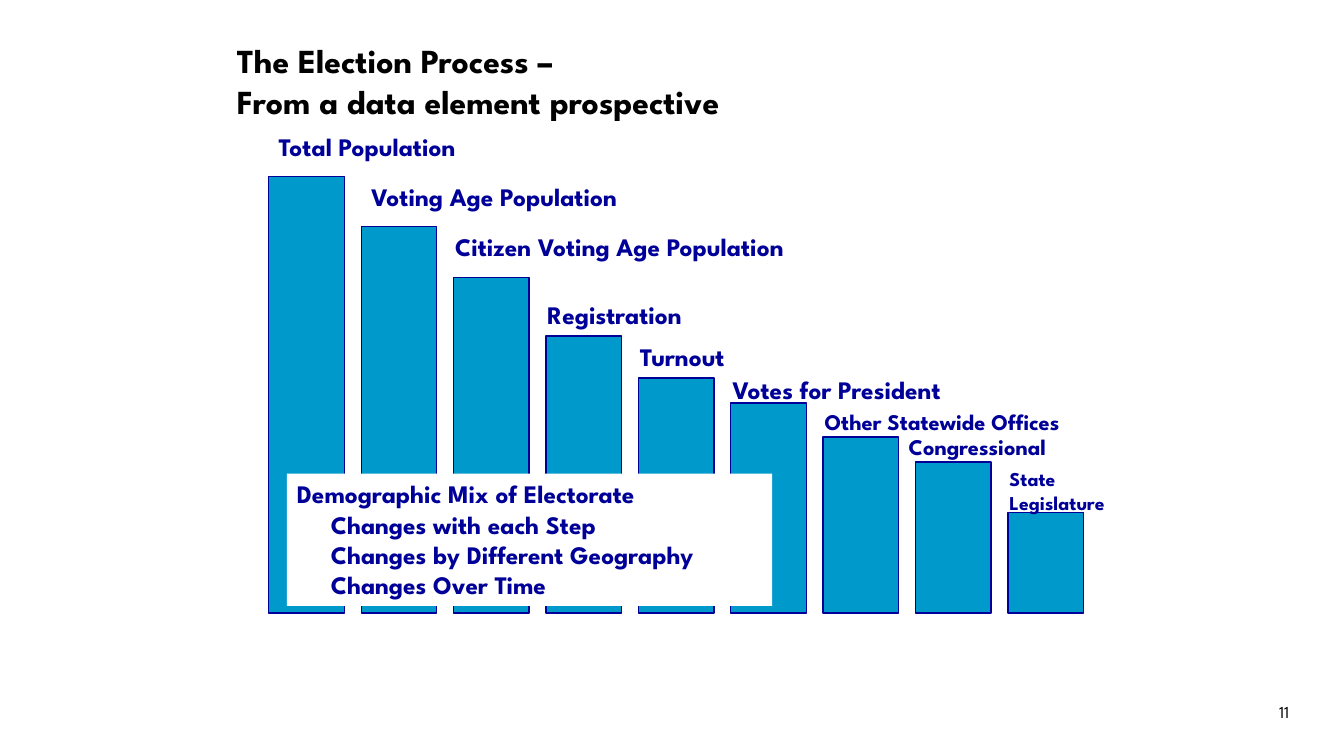
from pptx import Presentation
from pptx.dml.color import RGBColor
from pptx.enum.shapes import MSO_SHAPE
from pptx.enum.text import MSO_ANCHOR, MSO_AUTO_SIZE, PP_ALIGN
from pptx.util import Pt

RECTANGLE = MSO_SHAPE.RECTANGLE
TOP, BOTTOM = MSO_ANCHOR.TOP, MSO_ANCHOR.BOTTOM
NO_FIT = MSO_AUTO_SIZE.NONE
LEFT, RIGHT = PP_ALIGN.LEFT, PP_ALIGN.RIGHT

FONT = "League Spartan"
COLORS = {"bar": "0099CC", "navy": "000099", "black": "000000", "white": "FFFFFF"}

BAR_LEFT, BAR_PITCH, BAR_WIDTH, BAR_BOTTOM = 192, 66, 54, 438
TITLE_LINES = ["The Election Process –", "From a data element prospective"]
STEPS = [
    (126, ["Total Population"], (192, 90, 216, 29), 18),
    (162, ["Voting Age Population"], (258, 126, 240, 29), 18),
    (198, ["Citizen Voting Age Population"], (318, 162, 324, 29), 18),
    (240, ["Registration"], (384, 210, 210, 29), 18),
    (270, ["Turnout"], (450, 240, 186, 29), 18),
    (288, ["Votes for President"], (516, 264, 216, 29), 18),
    (312, ["Other Statewide Offices"], (582, 288, 201.6, 27), 16),
    (330, ["Congressional"], (642, 306, 126, 27), 16),
    (366, ["State", "Legislature"], (714, 330, 87, 41), 14),
]
CHANGES = ["Changes with each Step", "Changes by Different Geography", "Changes Over Time"]


def color(name):
    return RGBColor.from_string(COLORS[name])


def add_span(para, text, size, color_name="navy", bold=True):
    span = para.add_run()
    span.text = text
    span.font.name = FONT
    span.font.size = Pt(size)
    span.font.bold = bold
    span.font.color.rgb = color(color_name)


def fill_lines(frame, lines, size, color_name="navy", bold=True, align=LEFT):
    frame.word_wrap = True
    frame.vertical_anchor = TOP
    for index, text in enumerate(lines):
        para = frame.add_paragraph() if index else frame.paragraphs[0]
        para.alignment = align
        add_span(para, text, size, color_name, bold)


def add_title(page):
    title = page.shapes.title
    title.left, title.top, title.width, title.height = map(Pt, (162, 30, 630, 60))
    frame = title.text_frame
    frame.auto_size = NO_FIT
    frame.vertical_anchor = BOTTOM
    para = frame.paragraphs[0]
    para.alignment = LEFT
    for index, text in enumerate(TITLE_LINES):
        if index:
            para.add_line_break()
        add_span(para, text, 24, "black")


def add_rectangle(page, place, fill, line=None):
    box = page.shapes.add_shape(RECTANGLE, *map(Pt, place))
    box.shadow.inherit = False
    box.fill.solid()
    box.fill.fore_color.rgb = color(fill)
    if line:
        box.line.color.rgb = color(line)
        box.line.width = Pt(1)
    else:
        box.line.fill.background()
    return box


def add_label(page, place, lines, size, **style):
    box = page.shapes.add_textbox(*map(Pt, place))
    fill_lines(box.text_frame, lines, size, **style)


def add_summary(page):
    box = add_rectangle(page, (205, 338.4, 346.5, 94.5), "white")
    fill_lines(box.text_frame, ["Demographic Mix of Electorate"] + CHANGES, 18)
    for para in box.text_frame.paragraphs[1:]:
        properties = para._p.get_or_add_pPr()
        properties.set("marL", str(Pt(24.3)))
        properties.set("indent", "0")


def main():
    deck = Presentation()
    deck.slide_width, deck.slide_height = Pt(960), Pt(540)
    page = deck.slides.add_slide(deck.slide_layouts[5])
    add_title(page)
    for index, (top, lines, place, size) in enumerate(STEPS):
        left = BAR_LEFT + index * BAR_PITCH
        add_rectangle(page, (left, top, BAR_WIDTH, BAR_BOTTOM - top), "bar", "navy")
        add_label(page, place, lines, size)
    add_summary(page)
    add_label(page, (816, 498, 112, 20), ["11"], 12, color_name="black", bold=False, align=RIGHT)
    deck.save("out.pptx")


if __name__ == "__main__":
    main()
